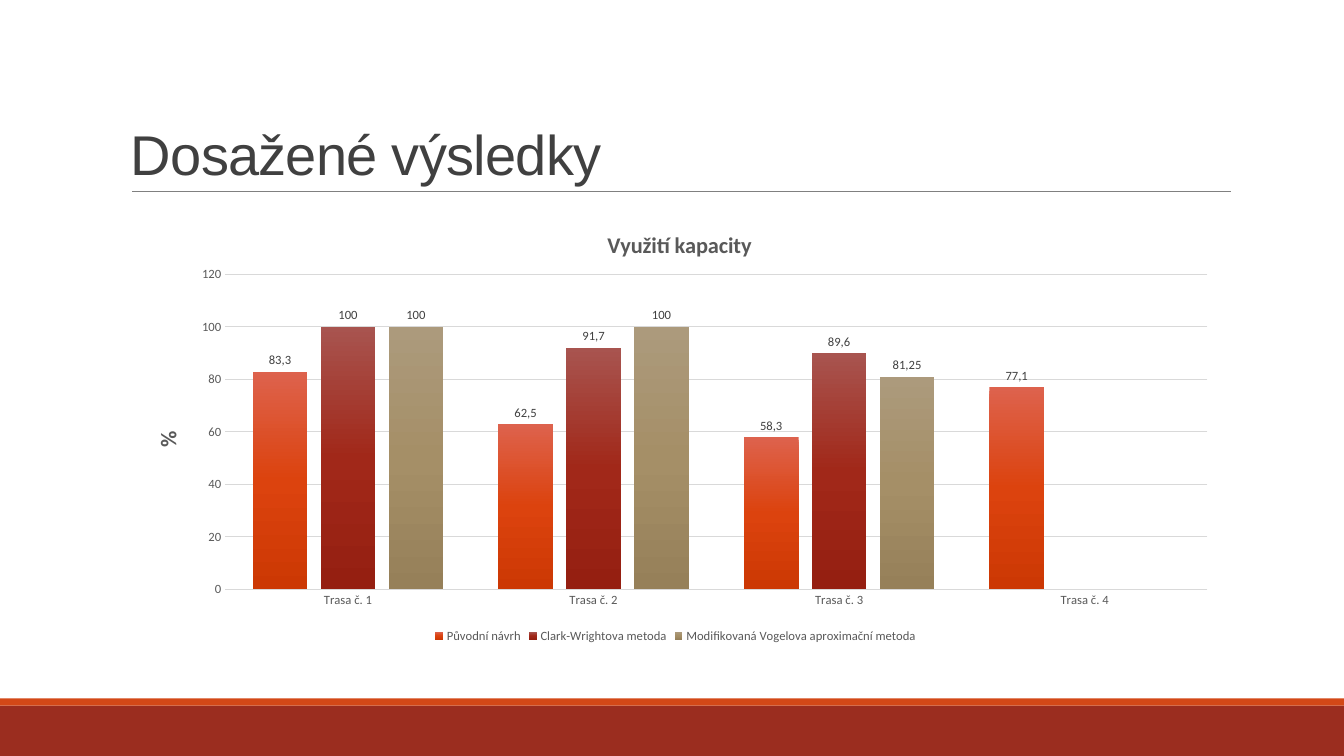
from copy import deepcopy

from pptx import Presentation
from pptx import util as u
from pptx.chart import data as chart_data
from pptx.dml.color import RGBColor
from pptx.enum import chart as ch, shapes, text
from pptx.oxml import parse_xml
from pptx.oxml.ns import nsdecls, qn

BRICK = RGBColor(0x9B, 0x2D, 0x1F)
ORANGE = RGBColor(0xD3, 0x48, 0x17)
RULE_GREY = RGBColor(0x80, 0x80, 0x80)
GRID_GREY = RGBColor(0xD9, 0xD9, 0xD9)
DARK = RGBColor(0x40, 0x40, 0x40)
MID = RGBColor(0x59, 0x59, 0x59)

HEADING = {"name": "Arial", "size": u.Pt(40), "color": DARK}
CHART_TITLE = {"name": "Calibri", "size": u.Pt(16), "bold": True, "color": MID}
AXIS = {"name": "Calibri", "size": u.Pt(9), "color": MID}
LABEL = {**AXIS, "color": DARK}

ROUTES = ["Trasa č. 1", "Trasa č. 2", "Trasa č. 3", "Trasa č. 4"]
# name, values, labels that differ from the value, gradient from top to bottom
METHODS = [
    ("Původní návrh", (83, 63, 58, 77),
     {0: "83,3", 1: "62,5", 2: "58,3", 3: "77,1"}, ("DD624D", "DC430E", "CC3804")),
    ("Clark-Wrightova metoda", (100, 92, 90, 0),
     {1: "91,7", 2: "89,6"}, ("A8544F", "A12819", "951F11")),
    ("Modifikovaná Vogelova aproximační metoda", (100, 100, 81, 0),
     {2: "81,25"}, ("AC9A7C", "A58F67", "968059")),
]


def apply(target, values):
    """Set each value as an attribute; a colour goes to the colour's rgb."""
    for key, value in values.items():
        if key == "color":
            target.color.rgb = value
        else:
            setattr(target, key, value)


def place(element, **fractions):
    """Give a chart part a manual layout in fractions of the chart."""
    inner = '<c:layoutTarget val="inner"/>' if "w" in fractions else ""
    modes = "".join(f'<c:{k}Mode val="edge"/>' for k in "xy")
    sizes = "".join(f'<c:{k} val="{v}"/>' for k, v in fractions.items())
    layout = parse_xml(f'<c:layout {nsdecls("c")}><c:manualLayout>'
                       f"{inner}{modes}{sizes}</c:manualLayout></c:layout>")
    old = element.find(qn("c:layout"))
    if old is None:
        element.insert(0, layout)
    else:
        element.replace(old, layout)


class Deck:
    def __init__(self):
        self.prs = Presentation()
        self.prs.slide_width, self.prs.slide_height = u.Cm(33.87), u.Cm(19.05)
        self.slide = self.prs.slides.add_slide(self.prs.slide_layouts[6])

    def band(self, top, height, color):
        band = self.slide.shapes.add_shape(
            shapes.MSO_SHAPE.RECTANGLE, 0, u.Cm(top), self.prs.slide_width, u.Cm(height))
        band.shadow.inherit = False
        band.fill.solid()
        band.fill.fore_color.rgb = color
        band.line.fill.background()

    def rule(self, left, right, y):
        rule = self.slide.shapes.add_connector(
            shapes.MSO_CONNECTOR.STRAIGHT, u.Cm(left), u.Cm(y), u.Cm(right), u.Cm(y))
        apply(rule.line, {"color": RULE_GREY, "width": u.Pt(0.5)})
        rule._element.spPr.append(parse_xml(f'<a:effectLst {nsdecls("a")}/>'))

    def heading(self, wording, *box):
        frame = self.slide.shapes.add_textbox(*map(u.Cm, box)).text_frame
        apply(frame, {"word_wrap": True, "vertical_anchor": text.MSO_ANCHOR.BOTTOM})
        frame.paragraphs[0].line_spacing = 0.85
        run = frame.paragraphs[0].add_run()
        run.text = wording
        apply(run.font, HEADING)
        run.font._element.set("spc", "-50")

    def chart(self, *box):
        data = chart_data.CategoryChartData()
        data.categories = ROUTES
        for name, values, *_ in METHODS:
            data.add_series(name, values)
        chart = self.slide.shapes.add_chart(
            ch.XL_CHART_TYPE.COLUMN_CLUSTERED, *map(u.Cm, box), data).chart
        apply(chart.font, {"name": "Calibri", "size": u.Pt(10)})
        chart.has_legend = True
        apply(chart.legend, {"position": ch.XL_LEGEND_POSITION.BOTTOM,
                             "include_in_layout": False})
        apply(chart.legend.font, AXIS)
        apply(chart.plots[0], {"gap_width": 100, "overlap": -24,
                               "vary_by_categories": False})
        place(chart._chartSpace.chart.plotArea, x=0.094, y=0.16, w=0.886, h=0.71)
        return chart

    def chart_title(self, owner, title, wording, x, y):
        title.text_frame.text = wording
        apply(title.text_frame.paragraphs[0].runs[0].font, CHART_TITLE)
        place(title._element, x=x, y=y)

    def axes(self, chart):
        for axis in (chart.category_axis, chart.value_axis):
            apply(axis, {"major_tick_mark": ch.XL_TICK_MARK.NONE,
                         "minor_tick_mark": ch.XL_TICK_MARK.NONE})
            apply(axis.tick_labels.font, AXIS)
        apply(chart.category_axis.format.line, {"color": GRID_GREY, "width": u.Pt(1)})
        values = chart.value_axis
        apply(values, {"minimum_scale": 0, "maximum_scale": 120, "major_unit": 20,
                       "has_major_gridlines": True})
        values.format.line.fill.background()
        apply(values.major_gridlines.format.line,
              {"color": GRID_GREY, "width": u.Pt(0.75)})

    def series(self, series, labels, colors):
        # Three-stop gradient running downwards
        fill = series.format.fill
        fill.gradient()
        fill.gradient_angle = 270
        stops = series._element.find(".//" + qn("a:gsLst"))
        stops.append(deepcopy(stops[-1]))
        for i, (stop, color) in enumerate(zip(fill.gradient_stops, colors)):
            stop.position = i / 2
            stop.color.rgb = RGBColor.from_string(color)
        # Value labels; the number format hides zeros
        outside = ch.XL_LABEL_POSITION.OUTSIDE_END
        apply(series.data_labels, {"show_value": True, "position": outside,
                                   "number_format": "0;;",
                                   "number_format_is_linked": False})
        apply(series.data_labels.font, LABEL)
        for point, wording in labels.items():
            label = series.points[point].data_label
            label.text_frame.text = wording
            apply(label.text_frame.paragraphs[0].runs[0].font, LABEL)
            label.position = outside


def main():
    deck = Deck()

    # Footer bands, heading and its rule
    deck.band(17.78, 1.27, BRICK)
    deck.band(17.6, 0.18, ORANGE)
    deck.rule(3.33, 31.01, 4.83)
    deck.heading("Dosažené výsledky", 3.05, 0.79, 27.94, 4.04)

    # Capacity chart
    capacity = deck.chart(3.05, 5.13, 27.94, 11.18)
    deck.axes(capacity)
    deck.chart_title(capacity, capacity.chart_title, "Využití kapacity", 0.435, 0.05)
    percent = capacity.value_axis.axis_title
    deck.chart_title(capacity.value_axis, percent, "%", 0.025, 0.505)
    turned = percent._element.find(".//" + qn("a:bodyPr"))
    for key, value in {"rot": "-5400000", "vert": "horz"}.items():
        turned.set(key, value)
    for series, (_, _, labels, colors) in zip(capacity.plots[0].series, METHODS):
        deck.series(series, labels, colors)

    deck.prs.save("out.pptx")


if __name__ == "__main__":
    main()
